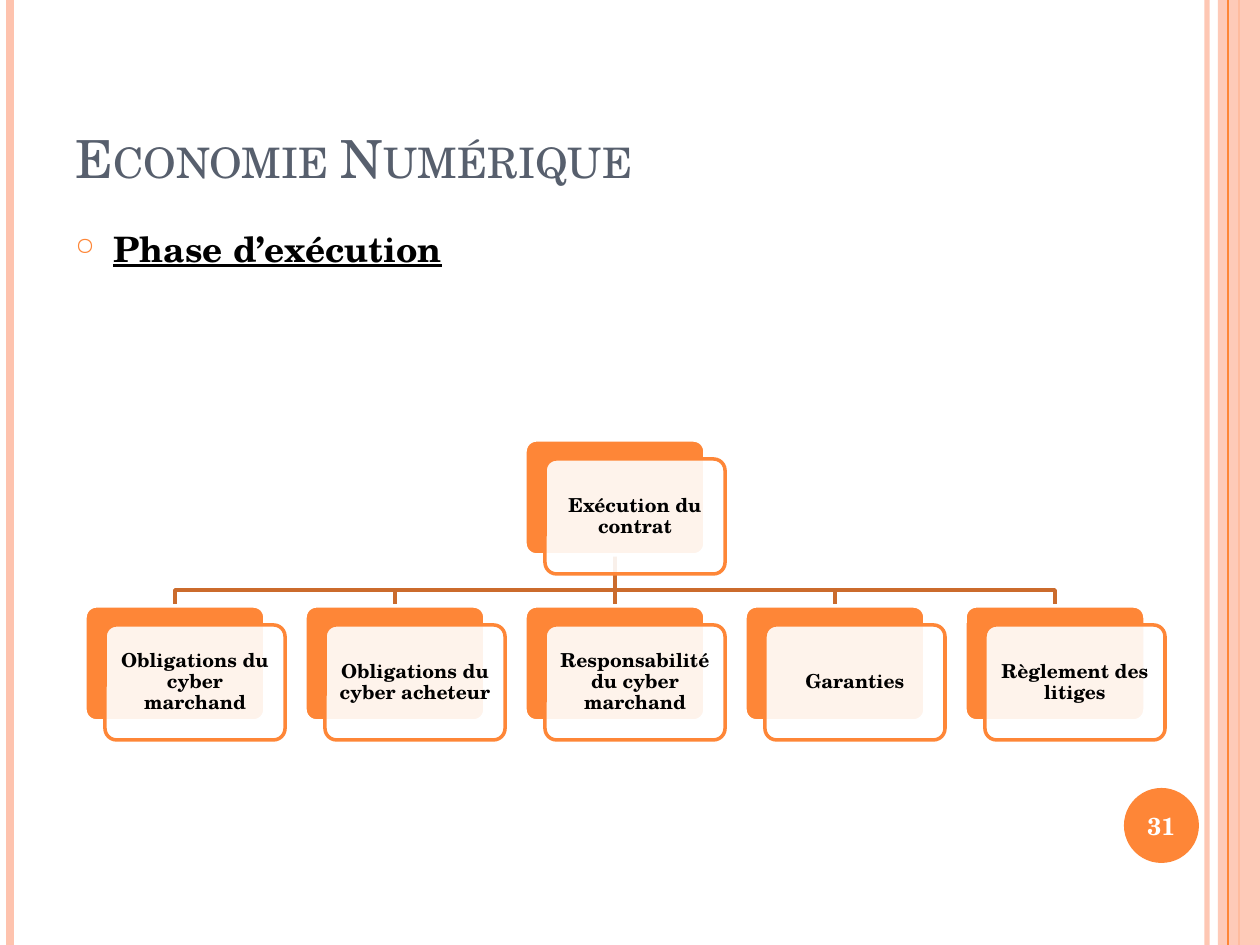
from pptx import Presentation
from pptx.dml.color import RGBColor
from pptx.enum.shapes import MSO_CONNECTOR, MSO_SHAPE
from pptx.enum.text import MSO_ANCHOR, PP_ALIGN
from pptx.oxml.ns import qn
from pptx.util import Pt
from lxml.etree import SubElement

PX = 914400 / 126
FONT = "TeX Gyre Schola"
COLORS = {
    "orange": "FE8637",
    "peach": "FEC3AE",
    "branch": "CB6B2C",
    "slate": "575F6D",
    "white": "FFFFFF",
    "black": "000000",
}


def px(length):
    return round(length * PX)


class SlideBuilder:
    def __init__(self, slide):
        self.slide = slide
        self.shapes = slide.shapes

    def paint(self, color_format, color, opacity=100):
        color_format.rgb = RGBColor.from_string(COLORS[color])
        if opacity < 100:
            for element in color_format._xFill.iter(qn("a:srgbClr")):
                SubElement(element, qn("a:alpha"), val=str(opacity * 1000))

    def stroke(self, line, color, width, opacity=100):
        line.fill.solid()
        self.paint(line.fill.fore_color, color, opacity)
        line.width = Pt(width)

    def line(self, start, end, color, width, opacity=100):
        connector = self.shapes.add_connector(
            MSO_CONNECTOR.STRAIGHT, *map(px, start + end))
        self.stroke(connector.line, color, width, opacity)
        SubElement(connector._element.spPr, qn("a:effectLst"))

    def polyline(self, points, color, width):
        builder = self.shapes.build_freeform(*points[0], scale=PX)
        builder.add_line_segments(points[1:], close=False)
        shape = builder.convert_to_shape()
        shape.shadow.inherit = False
        shape.fill.background()
        self.stroke(shape.line, color, width)

    def shape(self, kind, box, fill, opacity=100, outline=None, radius=None):
        shape = self.shapes.add_shape(kind, *map(px, box))
        shape.shadow.inherit = False
        shape.fill.solid()
        self.paint(shape.fill.fore_color, fill, opacity)
        if outline:
            self.stroke(shape.line, outline, 2)
        else:
            shape.line.fill.background()
        if radius is not None:
            shape.adjustments[0] = radius
        return shape

    def text_box(self, box):
        return self.shapes.add_textbox(*map(px, box))

    def set_text(self, shape, text, size, color, bold=False, centered=False,
                 anchor=MSO_ANCHOR.MIDDLE, inset=None, bullet=None):
        frame = shape.text_frame
        frame.word_wrap = True
        frame.vertical_anchor = anchor
        if inset is not None:
            frame.margin_left = frame.margin_right = px(inset)
            frame.margin_top = frame.margin_bottom = px(inset)
        paragraph = frame.paragraphs[0]
        paragraph.text = text
        paragraph.alignment = PP_ALIGN.CENTER if centered else PP_ALIGN.LEFT
        if bullet:
            self.bullet(paragraph, bullet)
        font = paragraph.font
        font.name, font.size, font.bold = FONT, Pt(size), bold
        self.paint(font.color, color)
        return paragraph

    def bullet(self, paragraph, character):
        properties = paragraph._p.get_or_add_pPr()
        properties.set("marL", str(px(38)))
        properties.set("indent", str(px(-38)))
        color = SubElement(properties, qn("a:buClr"))
        SubElement(color, qn("a:srgbClr"), val=COLORS["orange"])
        SubElement(properties, qn("a:buSzPct"), val="70000")
        SubElement(properties, qn("a:buChar"), char=character)

    def card(self, left, top, text):
        """Solid card with a translucent outlined card in front."""
        self.shape(MSO_SHAPE.ROUNDED_RECTANGLE, (left, top, CARD_WIDTH, CARD_HEIGHT),
                   "orange", outline="white", radius=0.1)
        front = self.shape(
            MSO_SHAPE.ROUNDED_RECTANGLE,
            (left + 20, top + 19, CARD_WIDTH, CARD_HEIGHT),
            "white", opacity=90, outline="orange", radius=0.1)
        paragraph = self.set_text(front, text, 11, "black", bold=True,
                                  centered=True, inset=6)
        paragraph.line_spacing = 0.9


CARD_WIDTH, CARD_HEIGHT = 180, 115
FIRST_LEFT, COLUMN_STEP = 85, 220
ROOT_TOP, CHILD_TOP, BRANCH_Y = 440, 606, 590
ROOT_COLUMN = 2
CHILDREN = [
    "Obligations du cyber marchand",
    "Obligations du cyber acheteur",
    "Responsabilité du cyber marchand",
    "Garanties",
    "Règlement des litiges",
]


def main():
    presentation = Presentation()
    presentation.slide_width, presentation.slide_height = px(1260), px(945)
    builder = SlideBuilder(
        presentation.slides.add_slide(presentation.slide_layouts[6]))

    # Side stripes
    for x, color, width, opacity in [(1207, "peach", 3, 93),
                                     (10, "peach", 4.5, 100),
                                     (1239, "orange", 1.5, 100)]:
        builder.line((x, 0), (x, 945), color, width, opacity)
    builder.shape(MSO_SHAPE.RECTANGLE, (1218, 0, 42, 945), "peach", opacity=87)
    builder.line((1228, 0), (1228, 945), "orange", 0.75)

    # Slide number
    badge = builder.shape(MSO_SHAPE.OVAL, (1124, 788, 75, 75), "orange")
    builder.set_text(badge, "31", 14, "white", bold=True, centered=True, inset=0)

    # Title and heading
    title = builder.set_text(builder.text_box((63, 38, 1029, 157)),
                             "Economie Numérique", 30, "slate",
                             anchor=MSO_ANCHOR.BOTTOM)
    title.runs[0]._r.get_or_add_rPr().set("cap", "small")
    heading = builder.set_text(builder.text_box((63, 221, 1029, 672)),
                               "Phase d’exécution", 20, "black", bold=True,
                               anchor=MSO_ANCHOR.TOP, bullet="○")
    heading.font.underline = True

    # Branches from the root to each child
    lefts = [FIRST_LEFT + COLUMN_STEP * column for column in range(len(CHILDREN))]
    root_left = lefts[ROOT_COLUMN]
    root_x, root_bottom = root_left + CARD_WIDTH // 2, ROOT_TOP + CARD_HEIGHT
    for left in reversed(lefts):
        x = left + CARD_WIDTH // 2
        if x == root_x:
            builder.line((x, root_bottom), (x, CHILD_TOP), "branch", 2)
        else:
            builder.polyline([(root_x, root_bottom), (root_x, BRANCH_Y),
                              (x, BRANCH_Y), (x, CHILD_TOP)], "branch", 2)

    # Cards
    builder.card(root_left, ROOT_TOP, "Exécution du contrat")
    for left, text in zip(lefts, CHILDREN):
        builder.card(left, CHILD_TOP, text)

    presentation.save("out.pptx")


if __name__ == "__main__":
    main()
